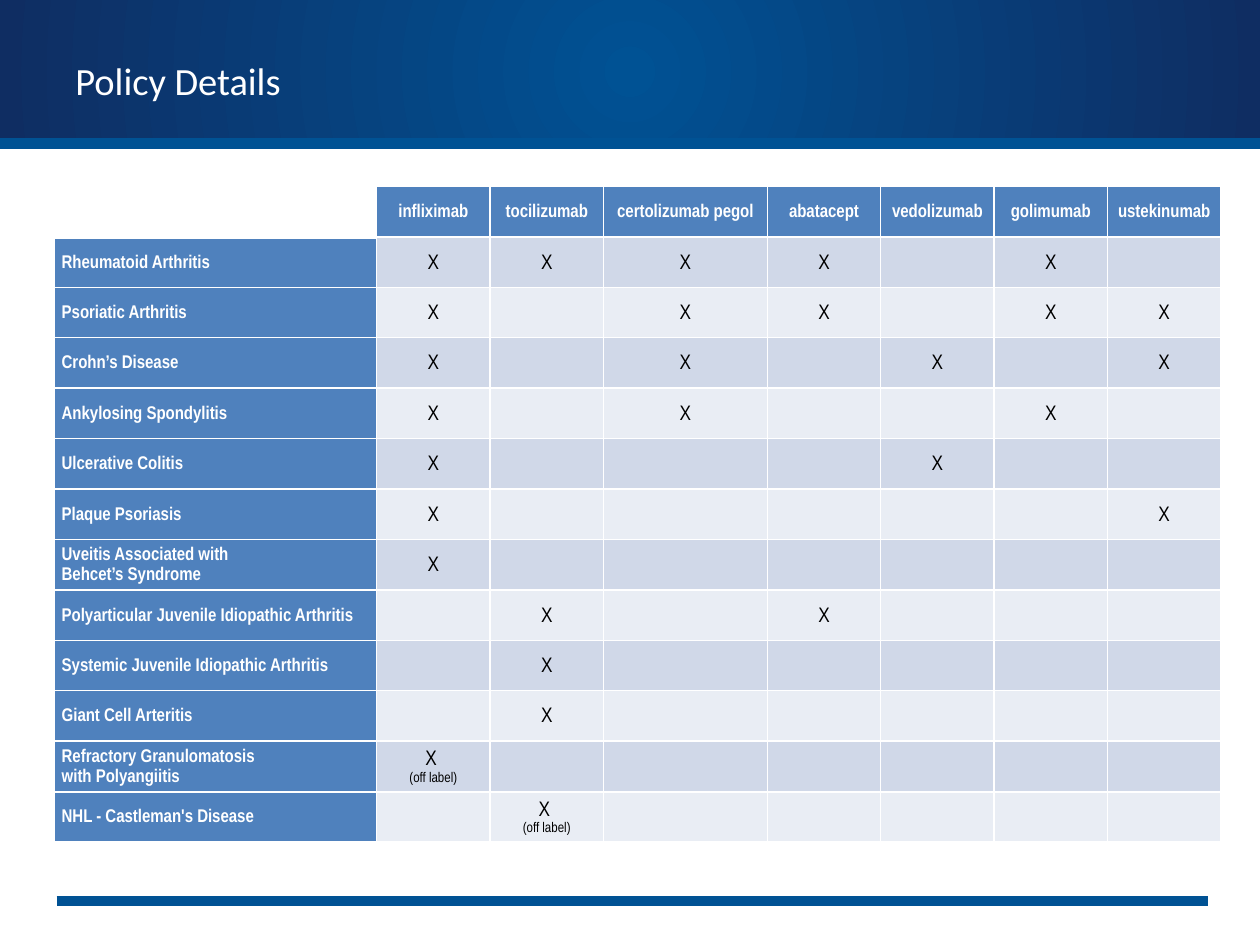
from dataclasses import dataclass

from lxml import etree
from pptx import Presentation
from pptx import util as u
from pptx.dml.color import RGBColor
from pptx.enum import shapes, text
from pptx.oxml.ns import qn


@dataclass(frozen=True)
class Theme:
    # Colours
    blue: str = "005294"
    navy: str = "0F2D62"
    head: str = "4F81BD"
    dark: str = "D0D8E8"
    light: str = "E9EDF4"
    white: str = "FFFFFF"
    black: str = "000000"
    # Fonts and type sizes
    sans: str = "Calibri"
    slim: str = "Arial Narrow"
    title: float = 22
    label: float = 10.5
    mark: float = 12
    note: float = 8


def rgb(code):
    return RGBColor.from_string(code)


def write(para, words, font, size, color, bold=False, align=None, lead=None):
    """Add text to a paragraph; a newline becomes a line break."""
    for i, line in enumerate(words.split("\n")):
        if i:
            para.add_line_break()
        if line:
            run = para.add_run()
            run.text = line
            run.font.name, run.font.size = font, u.Pt(size)
            run.font.bold = bold
            run.font.color.rgb = rgb(color)
    if align is not None:
        para.alignment = align
    if lead is not None:
        para.line_spacing = lead


class Deck:
    def __init__(self, theme, wide, high):
        self.theme = theme
        self.file = Presentation()
        self.file.slide_width, self.file.slide_height = u.Inches(wide), u.Inches(high)
        self.slide = self.file.slides.add_slide(self.file.slide_layouts[6])

    def band(self, *box):
        """Rectangle with a gradient that spreads from its centre."""
        rect = self.slide.shapes.add_shape(
            shapes.MSO_SHAPE.RECTANGLE, *map(u.Inches, box))
        rect.shadow.inherit = False
        rect.line.fill.background()
        rect.fill.gradient()
        stops = rect.fill.gradient_stops
        for stop, at, code in zip(stops, (0, 1), (self.theme.blue, self.theme.navy)):
            stop.position, stop.color.rgb = at, rgb(code)
        grad = rect._element.spPr.find(qn("a:gradFill"))
        grad.remove(grad.find(qn("a:lin")))
        ring = etree.SubElement(grad, qn("a:path"), path="circle")
        etree.SubElement(ring, qn("a:fillToRect"), dict.fromkeys("ltrb", "50000"))

    def rule(self, left, right, y, width=6):
        line = self.slide.shapes.add_connector(
            shapes.MSO_CONNECTOR.STRAIGHT, *map(u.Inches, (left, y, right, y)))
        line.line.color.rgb = rgb(self.theme.blue)
        line.line.width = u.Pt(width)
        etree.SubElement(line._element.spPr, qn("a:effectLst"))

    def title(self, words, *box):
        frame = self.slide.shapes.add_textbox(*map(u.Inches, box)).text_frame
        frame.word_wrap = True
        write(frame.paragraphs[0], words, self.theme.sans, self.theme.title,
              self.theme.white)

    def grid(self, left, top, cols, rows, high):
        frame = self.slide.shapes.add_table(
            rows, len(cols), *map(u.Inches, (left, top, sum(cols), rows * high)))
        for col, wide in zip(frame.table.columns, cols):
            col.width = u.Inches(wide)
        for row in frame.table.rows:
            row.height = u.Inches(high)
        return frame.table

    def cell(self, cell, fill, base=1):
        """Set fill, margins and borders; base is the bottom border width."""
        cell.fill.solid()
        cell.fill.fore_color.rgb = rgb(fill)
        cell.vertical_anchor = text.MSO_ANCHOR.MIDDLE
        cell.margin_left = cell.margin_right = u.Inches(0.06)
        cell.margin_top = cell.margin_bottom = 0
        props = cell._tc.get_or_add_tcPr()
        for i, side in enumerate("LRTB"):
            width = base if side == "B" else 1
            edge = etree.Element(qn(f"a:ln{side}"), w=str(u.Pt(width)))
            paint = etree.SubElement(edge, qn("a:solidFill"))
            etree.SubElement(paint, qn("a:srgbClr"), val=self.theme.white)
            props.insert(i, edge)
        return cell.text_frame.paragraphs[0]


DRUGS = ["infliximab", "tocilizumab", "certolizumab pegol", "abatacept",
         "vedolizumab", "golimumab", "ustekinumab"]

# One sign per drug: X is covered, o is covered off label
USES = [
    ("Rheumatoid Arthritis", "XXXX-X-"),
    ("Psoriatic Arthritis", "X-XX-XX"),
    ("Crohn’s Disease", "X-X-X-X"),
    ("Ankylosing Spondylitis", "X-X--X-"),
    ("Ulcerative Colitis", "X---X--"),
    ("Plaque Psoriasis", "X-----X"),
    ("Uveitis Associated with \nBehcet’s Syndrome", "X------"),
    ("Polyarticular Juvenile Idiopathic Arthritis", "-X-X---"),
    ("Systemic Juvenile Idiopathic Arthritis", "-X-----"),
    ("Giant Cell Arteritis", "-X-----"),
    ("Refractory Granulomatosis \nwith Polyangiitis", "o------"),
    ("NHL - Castleman's Disease", "-o-----"),
]


def main():
    theme = Theme()
    deck = Deck(theme, 10, 7.5)

    # Header and footer
    deck.band(0, 0, 10, 1.14)
    deck.rule(0, 10, 1.14)
    deck.rule(0.45, 9.59, 7.15)
    deck.title("Policy Details", 0.5, 0.4, 9, 0.6)

    # Table head
    cols = [2.56] + [1.3 if " " in drug else 0.9 for drug in DRUGS]
    grid = deck.grid(0.43, 1.48, cols, len(USES) + 1, 0.4)
    label = dict(font=theme.slim, size=theme.label, color=theme.white,
                 bold=True, lead=1.15)
    mark = dict(font=theme.slim, color=theme.black,
                align=text.PP_ALIGN.CENTER, lead=1.15)
    deck.cell(grid.cell(0, 0), theme.white, base=3)
    for c, drug in enumerate(DRUGS, 1):
        para = deck.cell(grid.cell(0, c), theme.head)
        write(para, drug, align=text.PP_ALIGN.CENTER, **label)

    # Table body
    for r, (use, signs) in enumerate(USES, 1):
        write(deck.cell(grid.cell(r, 0), theme.head), use, **label)
        for c, sign in enumerate(signs, 1):
            para = deck.cell(grid.cell(r, c), theme.dark if r % 2 else theme.light)
            if sign == "X":
                write(para, "X", size=theme.mark, **mark)
            elif sign == "o":
                write(para, "X \n", size=theme.mark, **mark)
                write(para, "(off label)", size=theme.note, **mark)

    deck.file.save("out.pptx")


if __name__ == "__main__":
    main()
